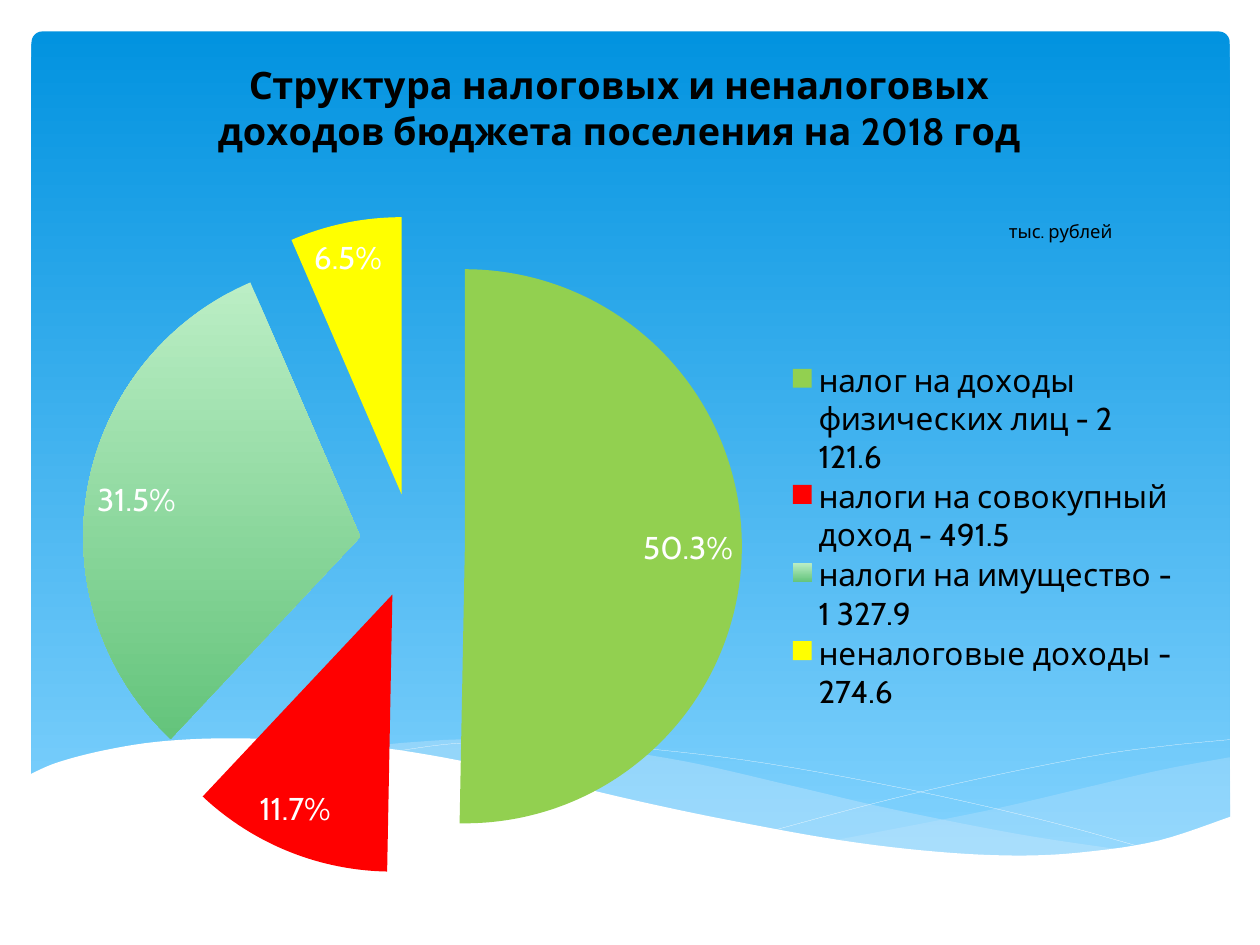
from dataclasses import dataclass
from lxml import etree
from pptx import Presentation
from pptx import util as u
from pptx.chart.data import CategoryChartData
from pptx.dml.color import RGBColor
from pptx.enum import chart as ch
from pptx.enum import shapes, text
from pptx.oxml.ns import qn


@dataclass(frozen=True)
class Theme:
    font: str = "Cabin"
    ink: str = "000000"
    white: str = "FFFFFF"
    mist: str = "C6E7FC"
    sky: tuple = ("0293E0", "83D3FE")
    slices: tuple = ("92D050", "FF0000", ("BBEEC5", "64C47B"), "FFFF00")
    head: float = 21.6
    body: int = 18
    note: float = 10.5
    hair: float = 0.1


T = Theme()
COLS, ROWS = 100, 75
CELL = u.Inches(0.1)

TAXES = [
    ("налог на доходы физических лиц - 2 121.6", 50.3),
    ("налоги на совокупный доход - 491.5", 11.7),
    ("налоги на имущество - 1 327.9", 31.5),
    ("неналоговые доходы - 274.6", 6.5),
]

CREST = [(97.6, 60.1), (92.2, 61.1), (86.2, 62.5), (78, 64.4), (66.2, 66.7)]
TROUGH = [(66.2, 66.7), (73.3, 67.6), (80.4, 68), (87.3, 67.6), (92.9, 66.5), (97.7, 64.9)]
RIDGE = [(89.4, 67.5), (80.8, 66.2), (70.7, 64.2), (63, 62.4), (54.2, 60.4),
         (46.5, 59.3), (38, 58.7), (32.8, 58.9), (28.7, 59.3)]
BASIN = [(28.7, 59.3), (36.3, 60.4), (45, 62.4), (56.7, 65), (66.6, 66.8),
         (74.9, 67.8), (81.9, 68), (89.4, 67.5)]
FALL = [(31, 59.7), (36.3, 59), (43.3, 58.9), (51.1, 59.4), (60.9, 60.6),
        (72.8, 62.8), (83.2, 65.2), (90.8, 67.3)]
RISE = [(61.4, 65.9), (69.6, 63.7), (77.7, 61.8), (86.7, 60), (92.5, 59.2), (97.6, 58.7)]
SHORE = [(97.7, 64.8), (92, 66.7), (86.3, 67.6), (80.9, 67.9), (74.4, 67.6),
         (66.8, 66.7), (57.9, 65.1), (50.3, 63.5), (41.8, 61.5), (34, 59.9),
         (27.1, 59), (19.3, 58.6), (13.2, 58.8), (8.5, 59.5), (4.6, 60.5), (2.3, 61.5)]


def rgb(code):
    return RGBColor.from_string(code)


def box(x, y, w, h):
    return [round(n * CELL) for n in (x, y, w, h)]


def paint(fill, tint, alpha=None):
    if isinstance(tint, tuple):
        fill.gradient()
        fill.gradient_angle = 270
        for k, (stop, code) in enumerate(zip(fill.gradient_stops, tint)):
            stop.color.rgb = rgb(code)
            stop.position = k
        return
    fill.solid()
    fill.fore_color.rgb = rgb(tint)
    if alpha:
        node = fill._xPr.find(".//" + qn("a:srgbClr"))
        etree.SubElement(node, qn("a:alpha")).set("val", str(alpha * 1000))


def style(font, size, tint=T.ink, bold=False):
    font.name, font.size, font.bold = T.font, u.Pt(size), bold
    font.color.rgb = rgb(tint)


def write(slide, words, *, at, size, tint=T.ink, bold=False):
    shape = slide.shapes.add_textbox(*box(*at))
    frame = shape.text_frame
    frame.word_wrap = True
    frame.auto_size = text.MSO_AUTO_SIZE.SHAPE_TO_FIT_TEXT
    run = frame.paragraphs[0].add_run()
    run.text = words
    style(run.font, size, tint, bold)


def curve(knots, steps=6):
    ends = [knots[0], *knots, knots[-1]]
    dots = [knots[0]]
    for a, b, c, d in zip(ends, ends[1:], ends[2:], ends[3:]):
        for k in range(1, steps + 1):
            t = k / steps
            dots.append(tuple(
                (2 * q + (r - p) * t + (2 * p - 5 * q + 4 * r - s) * t ** 2
                 + (3 * q - p - 3 * r + s) * t ** 3) / 2
                for p, q, r, s in zip(a, b, c, d)))
    return dots


def wave(slide, dots, tint=None, alpha=None):
    dots = [(round(x * CELL), round(y * CELL)) for x, y in dots]
    pen = slide.shapes.build_freeform(*dots[0])
    pen.add_line_segments(dots[1:], close=bool(tint))
    shape = pen.convert_to_shape()
    shape.shadow.inherit = False
    if tint:
        paint(shape.fill, tint, alpha)
        shape.line.fill.background()
    else:
        shape.fill.background()
        shape.line.color.rgb = rgb(T.white)
        shape.line.width = u.Pt(T.hair)


def scene(slide):
    panel = slide.shapes.add_shape(
        shapes.MSO_SHAPE.ROUNDED_RECTANGLE, *box(2.5, 2.5, 95.1, 66))
    panel.adjustments[0] = 0.013
    panel.shadow.inherit = False
    panel.line.fill.background()
    paint(panel.fill, T.sky)
    wave(slide, curve(CREST) + curve(TROUGH), T.mist, 29)
    wave(slide, curve(RIDGE) + curve(BASIN), T.mist, 40)
    for knots in (FALL, RISE):
        wave(slide, curve(knots))
    wave(slide, curve(SHORE) + [(2.3, 73.1), (97.7, 73.1)], T.white)


def place(node, after=None, inner=False, **spots):
    for old in node.findall(qn("c:layout")):
        node.remove(old)
    lay = etree.Element(qn("c:layout"))
    form = etree.SubElement(lay, qn("c:manualLayout"))
    parts = [("layoutTarget", "inner")] if inner else []
    parts += [("xMode", "edge"), ("yMode", "edge"), *spots.items()]
    for key, val in parts:
        etree.SubElement(form, qn("c:" + key)).set("val", str(val))
    if after:
        node.find(qn(after)).addnext(lay)
    else:
        node.insert(0, lay)


def pie(slide, title):
    data = CategoryChartData()
    data.categories = [name for name, _ in TAXES]
    data.add_series("Series 1", [val for _, val in TAXES])
    chart = slide.shapes.add_chart(
        ch.XL_CHART_TYPE.PIE, *box(3.5, 2.1, 91.3, 71.7), data).chart
    style(chart.font, T.body)

    chart.has_title = True
    run = chart.chart_title.text_frame.paragraphs[0].add_run()
    run.text = title
    style(run.font, T.head, bold=True)

    chart.has_legend = True
    key = chart.legend
    key.position = ch.XL_LEGEND_POSITION.RIGHT
    key.include_in_layout = False
    style(key.font, T.body)
    place(key._element, "c:legendPos", x=0.66, y=0.37, w=0.33, h=0.39)

    plot = chart.plots[0]
    plot.vary_by_categories = True
    place(plot._element.getparent(), inner=True, x=0.03, y=0.21, w=0.58, h=0.73)
    series = plot.series[0]
    burst = etree.Element(qn("c:explosion"))
    burst.set("val", "19")
    series._element.find(qn("c:tx")).addnext(burst)
    for k, tint in enumerate(T.slices):
        part = series.points[k].format
        paint(part.fill, tint)
        part.line.fill.background()

    tags = series.data_labels
    tags.show_percentage, tags.show_value = True, False
    tags.number_format, tags.number_format_is_linked = "0.0%", False
    tags.position = ch.XL_LABEL_POSITION.BEST_FIT
    style(tags.font, T.body, T.white)


def main():
    deck = Presentation()
    deck.slide_width, deck.slide_height = COLS * CELL, ROWS * CELL
    slide = deck.slides.add_slide(deck.slide_layouts[6])
    scene(slide)
    pie(slide, "Структура налоговых и неналоговых доходов бюджета поселения на 2018 год")
    write(slide, "тыс. рублей", at=(79.1, 17, 19.7, 2.8), size=T.note)
    deck.save("out.pptx")


if __name__ == "__main__":
    main()
